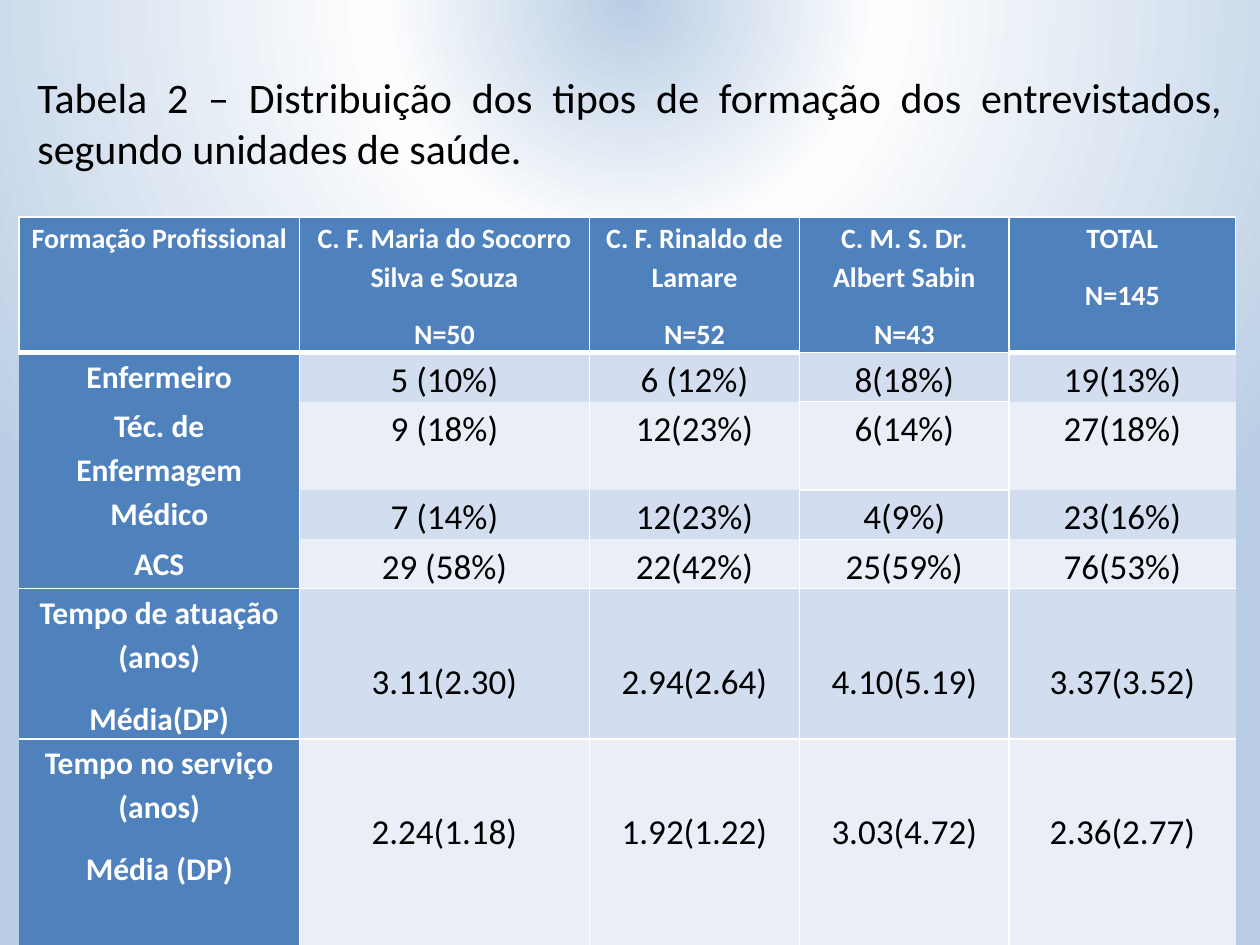
from dataclasses import dataclass

from pptx import Presentation
from pptx.dml.color import RGBColor
from pptx.enum.text import MSO_ANCHOR, MSO_AUTO_SIZE, PP_ALIGN
from pptx.oxml import parse_xml
from pptx.oxml.ns import nsdecls
from pptx.util import Cm, Pt

FONT = "Calibri"
COLORS = {
    "header": "4F81BD",
    "dark band": "D2DEEF",
    "light band": "EAEFF7",
    "white": "FFFFFF",
    "black": "000000",
    "edge": "B9CDE5",
    "glow": "FEFEFE",
}
COLUMN_WIDTHS = (5.66, 5.84, 4.24, 4.22, 4.57)
MINOR_COLUMN = 3  # the only column ruled between all its rows
GROUP_END = 4  # last row of the counts by profession


@dataclass
class TableRow:
    height: float
    label: str
    values: tuple[str, ...]
    value_top: float = 0


HEADER = TableRow(2.69, "Formação Profissional", (
    "C. F. Maria do Socorro Silva e Souza\nN=50",
    "C. F. Rinaldo de Lamare\nN=52",
    "C. M. S. Dr. Albert Sabin\nN=43",
    "TOTAL\nN=145",
))
BODY = (
    TableRow(0.97, "Enfermeiro", ("5 (10%)", "6 (12%)", "8(18%)", "19(13%)")),
    TableRow(1.75, "Téc. de Enfermagem", ("9 (18%)", "12(23%)", "6(14%)", "27(18%)")),
    TableRow(0.97, "Médico", ("7 (14%)", "12(23%)", "4(9%)", "23(16%)")),
    TableRow(0.97, "ACS", ("29 (58%)", "22(42%)", "25(59%)", "76(53%)")),
    TableRow(2.97, "Tempo de atuação (anos)\nMédia(DP)",
             ("3.11(2.30)", "2.94(2.64)", "4.10(5.19)", "3.37(3.52)"), 1.33),
    TableRow(4.2, "Tempo no serviço (anos)\nMédia (DP)",
             ("2.24(1.18)", "1.92(1.22)", "3.03(4.72)", "2.36(2.77)"), 1.33),
)


def rgb(name: str) -> RGBColor:
    return RGBColor.from_string(COLORS[name])


def set_background(slide) -> None:
    stops = "".join(
        f'<a:gs pos="{position * 1000}"><a:srgbClr val="{COLORS[name]}"/></a:gs>'
        for position, name in ((0, "edge"), (32, "glow"), (100, "edge"))
    )
    background = parse_xml(
        f'<p:bg {nsdecls("p", "a")}><p:bgPr><a:gradFill rotWithShape="1">'
        f'<a:gsLst>{stops}</a:gsLst><a:path path="circle">'
        '<a:fillToRect l="50000" t="-80000" r="50000" b="180000"/></a:path>'
        '</a:gradFill><a:effectLst/></p:bgPr></p:bg>'
    )
    slide.element.cSld.insert(0, background)


def format_runs(paragraph, size: float, color: str, bold: bool) -> None:
    for run in paragraph.runs:
        run.font.name = FONT
        run.font.size = Pt(size)
        run.font.bold = bold
        run.font.color.rgb = rgb(color)


def add_caption(slide, text: str) -> None:
    shape = slide.shapes.title
    shape.left, shape.top, shape.width, shape.height = Cm(0.5), Cm(1.32), Cm(24.4), Cm(2.32)
    text_frame = shape.text_frame
    text_frame.text = text
    text_frame.word_wrap = True
    text_frame.auto_size = MSO_AUTO_SIZE.NONE
    text_frame.vertical_anchor = MSO_ANCHOR.TOP
    paragraph = text_frame.paragraphs[0]
    paragraph.alignment = PP_ALIGN.JUSTIFY
    paragraph.space_before = Pt(4.8)
    format_runs(paragraph, 24, "black", False)


def fill_cell(cell, text: str, fill: str, size: float, color: str,
              bold: bool, top: float = 0) -> None:
    cell.margin_left = cell.margin_right = Cm(0.18)
    cell.margin_top, cell.margin_bottom = Cm(top), Cm(0)
    cell.vertical_anchor = MSO_ANCHOR.TOP
    cell.text_frame.text = text
    for paragraph in cell.text_frame.paragraphs:
        paragraph.alignment = PP_ALIGN.CENTER
        paragraph.line_spacing = 1.15
        paragraph.space_after = Pt(10)
        format_runs(paragraph, size, color, bold)
    cell.fill.solid()
    cell.fill.fore_color.rgb = rgb(fill)


def rule_below(row: int, column: int) -> float:
    """Width in points of the line under a row of the table."""
    if column == MINOR_COLUMN or row >= GROUP_END:
        return 1
    return 3 if row == 0 else 0


def set_borders(cell, row: int, column: int) -> None:
    last_column = len(COLUMN_WIDTHS) - 1
    widths = {
        "L": 1 if row == 0 or column > 0 else 0,
        "R": 1 if row == 0 or column < last_column else 0,
        "T": rule_below(row - 1, column) if row else 1,
        "B": rule_below(row, column),
    }
    properties = cell._tc.get_or_add_tcPr()
    for index, (side, width) in enumerate(widths.items()):
        paint = (f'<a:solidFill><a:srgbClr val="{COLORS["white"]}"/></a:solidFill>'
                 if width else "<a:noFill/>")
        properties.insert(index, parse_xml(
            f'<a:ln{side} {nsdecls("a")} w="{Pt(width)}">{paint}</a:ln{side}>'))


def add_training_table(slide) -> None:
    rows = (HEADER, *BODY)
    table = slide.shapes.add_table(
        len(rows), len(COLUMN_WIDTHS), Cm(0.38), Cm(4.37),
        Cm(sum(COLUMN_WIDTHS)), Cm(sum(row.height for row in rows)),
    ).table
    for column, width in zip(table.columns, COLUMN_WIDTHS):
        column.width = Cm(width)
    for row_index, row in enumerate(rows):
        table.rows[row_index].height = Cm(row.height)
        band = "dark band" if row_index % 2 else "light band"
        for column_index, text in enumerate((row.label, *row.values)):
            cell = table.cell(row_index, column_index)
            if row_index == 0:
                fill_cell(cell, text, "header", 16, "white", True)
            elif column_index == 0:
                fill_cell(cell, text, "header", 18, "white", True)
            else:
                fill_cell(cell, text, band, 20, "black", False, row.value_top)
            set_borders(cell, row_index, column_index)


def main() -> None:
    presentation = Presentation()
    presentation.slide_width, presentation.slide_height = Cm(25.4), Cm(19.05)
    slide = presentation.slides.add_slide(presentation.slide_layouts[5])
    set_background(slide)
    # Caption above the table
    add_caption(slide, "Tabela 2 – Distribuição dos tipos de formação dos "
                       "entrevistados, segundo unidades de saúde.")
    # Professions and years of work by health unit
    add_training_table(slide)
    presentation.save("out.pptx")


if __name__ == "__main__":
    main()
